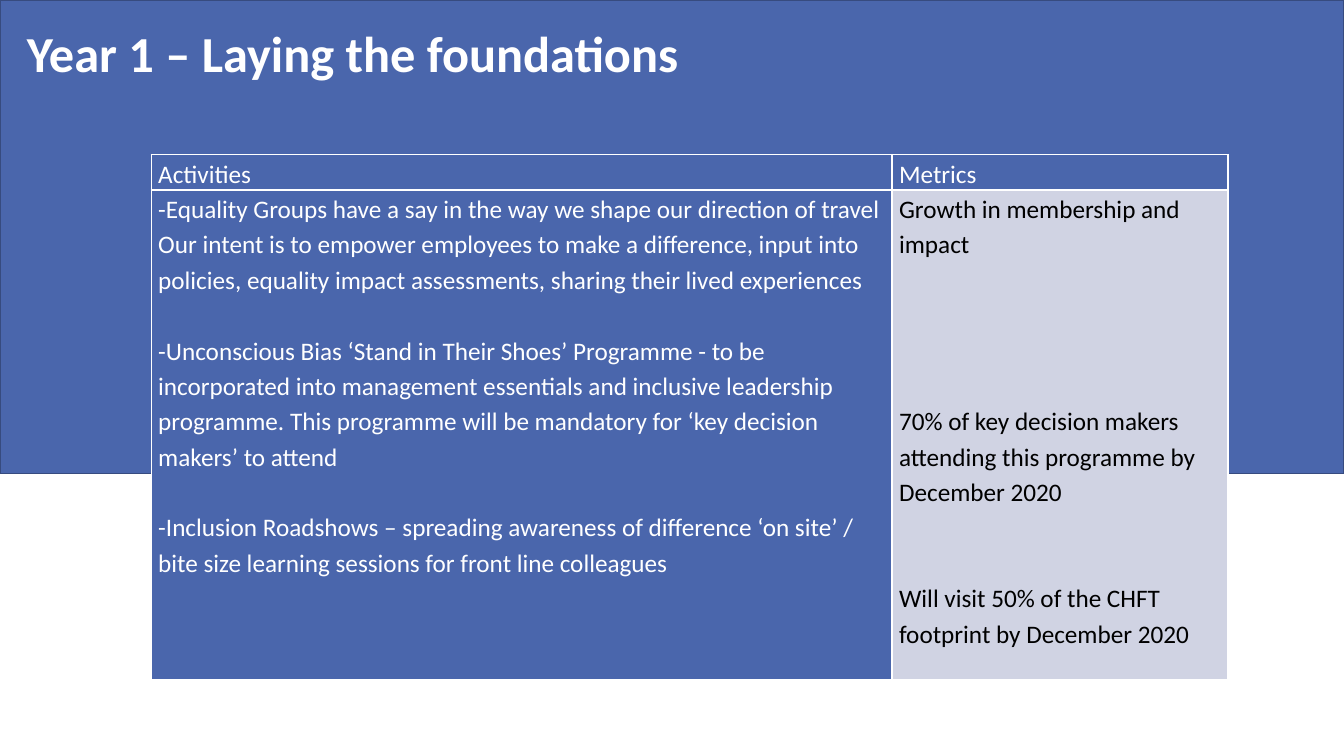
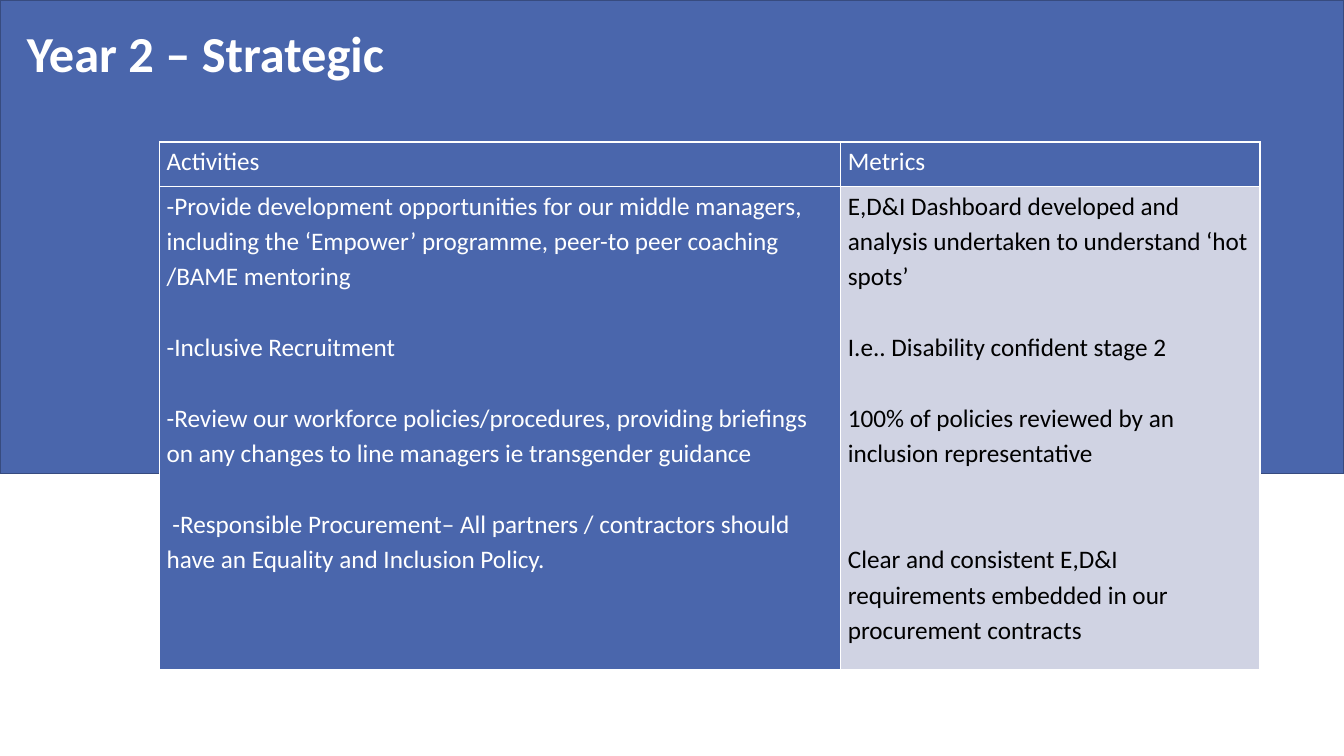
from typing import NamedTuple

from lxml.etree import SubElement
from pptx import Presentation
from pptx.dml.color import RGBColor
from pptx.enum.shapes import MSO_SHAPE
from pptx.enum.text import MSO_ANCHOR, MSO_AUTO_SIZE, PP_ALIGN
from pptx.oxml.ns import qn
from pptx.util import Inches, Pt

BLUE = RGBColor(0x4A, 0x66, 0xAC)
NAVY = RGBColor(0x37, 0x4B, 0x7F)
PALE = RGBColor(0xD0, 0xD3, 0xE3)
WHITE = RGBColor(0xFF, 0xFF, 0xFF)
BLACK = RGBColor(0x00, 0x00, 0x00)

# The slide is a grid of 160 columns by 90 rows
COLS, ROWS = 160, 90
CELL = Inches(7.5) / ROWS
BAND_ROWS = 56.4
TITLE_BOX = (2, 1.8, 85.8, 9.7)

TITLE_FONT = {"name": "Calibri", "size": Pt(36), "bold": True}
BODY_FONT = {"name": "Calibri", "size": Pt(18), "bold": False}
LINE_PITCH = 25.27  # points, 18 pt text at 1.15 line spacing
CELL_MARGINS = {"margin_left": Inches(0.07), "margin_right": Inches(0.07),
                "margin_top": 0, "margin_bottom": 0}


class Item(NamedTuple):
    text: str
    gap: int = 0  # empty lines above


class Plan(NamedTuple):
    title: str
    left: float
    top: float
    widths: tuple[float, float]
    heights: tuple[float, float]
    activities: list[Item]
    metrics: list[Item]


PLANS = [
    Plan(
        "Year 1 – Laying the foundations", 18, 18.4, (88.2, 40), (4, 58.3),
        [
            Item("-Equality Groups have a say in the way we shape our direction of travel"),
            Item("Our intent is to empower employees to make a difference, input into "
                 "policies, equality impact assessments, sharing their lived experiences"),
            Item("-Unconscious Bias ‘Stand in Their Shoes’ Programme - to be incorporated "
                 "into management essentials and inclusive leadership programme. This "
                 "programme will be mandatory for ‘key decision makers’ to attend", 1),
            Item("-Inclusion Roadshows – spreading awareness of difference ‘on site’ / "
                 "bite size learning sessions for front line colleagues", 1),
        ],
        [
            Item("Growth in membership and impact"),
            Item("70% of key decision makers attending this programme by December 2020", 4),
            Item("Will visit 50% of the CHFT footprint by December 2020", 2),
        ],
    ),
    Plan(
        "Year 2 – Strategic", 19, 16.9, (81.1, 49.9), (5.3, 57.5),
        [
            Item("-Provide development opportunities for our middle managers, including "
                 "the ‘Empower’ programme, peer-to peer coaching /BAME mentoring"),
            Item("-Inclusive Recruitment", 1),
            Item("-Review our workforce policies/procedures, providing briefings on any "
                 "changes to line managers ie transgender guidance", 1),
            Item(" -Responsible Procurement– All partners / contractors should have an "
                 "Equality and Inclusion Policy.", 1),
        ],
        [
            Item("E,D&I Dashboard developed and analysis undertaken to understand ‘hot spots’"),
            Item("I.e.. Disability confident stage 2", 1),
            Item("100% of policies reviewed by an inclusion representative", 1),
            Item("Clear and consistent E,D&I requirements embedded in our procurement "
                 "contracts", 2),
        ],
    ),
]


def grid(units: float) -> int:
    return round(units * CELL)


def apply(target, values: dict) -> None:
    for name, value in values.items():
        setattr(target, name, value)


def add_band(s, layout) -> None:
    """Draw the blue band and place it behind everything on the layout."""
    band = s.shapes.add_shape(MSO_SHAPE.RECTANGLE, 0, 0, grid(COLS), grid(BAND_ROWS))
    band.shadow.inherit = False
    band.fill.solid()
    band.fill.fore_color.rgb = BLUE
    band.line.color.rgb = NAVY
    band.line.width = Pt(1)
    band.element.nvSpPr.cNvPr.set("id", "20")
    layout.shapes.element.insert(2, band.element)


def set_title(s, text: str) -> None:
    title = s.shapes.title
    left, top, width, height = map(grid, TITLE_BOX)
    apply(title, {"left": left, "top": top, "width": width, "height": height})
    tf = title.text_frame
    tf.text = text
    apply(tf, {"vertical_anchor": MSO_ANCHOR.MIDDLE, "word_wrap": True,
               "auto_size": MSO_AUTO_SIZE.NONE})
    p = tf.paragraphs[0]
    apply(p, {"alignment": PP_ALIGN.LEFT, "line_spacing": 0.9})
    apply(p.font, TITLE_FONT)
    p.font.color.rgb = WHITE


def add_borders(cell) -> None:
    tc_pr = cell._tc.get_or_add_tcPr()
    for i, side in enumerate(("a:lnL", "a:lnR", "a:lnT", "a:lnB")):
        ln = SubElement(tc_pr, qn(side), w=str(Pt(1)))
        fill = SubElement(ln, qn("a:solidFill"))
        SubElement(fill, qn("a:srgbClr"), val=str(WHITE))
        tc_pr.insert(i, ln)


def fill_cell(cell, items: list[Item], fill: RGBColor, color: RGBColor) -> None:
    apply(cell, CELL_MARGINS)
    cell.fill.solid()
    cell.fill.fore_color.rgb = fill
    add_borders(cell)
    tf = cell.text_frame
    for i, item in enumerate(items):
        p = tf.add_paragraph() if i else tf.paragraphs[0]
        p.line_spacing = 1.15
        if item.gap:
            p.space_before = Pt(item.gap * LINE_PITCH)
        r = p.add_run()
        r.text = item.text
        apply(r.font, BODY_FONT)
        r.font.color.rgb = color


def add_plan_table(s, plan: Plan) -> None:
    table = s.shapes.add_table(2, 2, grid(plan.left), grid(plan.top),
                               grid(sum(plan.widths)), grid(sum(plan.heights))).table
    apply(table, {"first_row": False, "horz_banding": False})
    for column, width in zip(table.columns, plan.widths):
        column.width = grid(width)
    for row, height in zip(table.rows, plan.heights):
        row.height = grid(height)
    fill_cell(table.cell(0, 0), [Item("Activities")], BLUE, WHITE)
    fill_cell(table.cell(0, 1), [Item("Metrics")], BLUE, WHITE)
    fill_cell(table.cell(1, 0), plan.activities, BLUE, WHITE)
    fill_cell(table.cell(1, 1), plan.metrics, PALE, BLACK)


def main() -> None:
    prs = Presentation()
    prs.slide_width, prs.slide_height = grid(COLS), grid(ROWS)
    layout = prs.slide_layouts.get_by_name("Title Only")
    for i, plan in enumerate(PLANS):
        s = prs.slides.add_slide(layout)
        if i == 0:
            add_band(s, layout)
        set_title(s, plan.title)
        add_plan_table(s, plan)
    prs.save("out.pptx")


if __name__ == "__main__":
    main()
